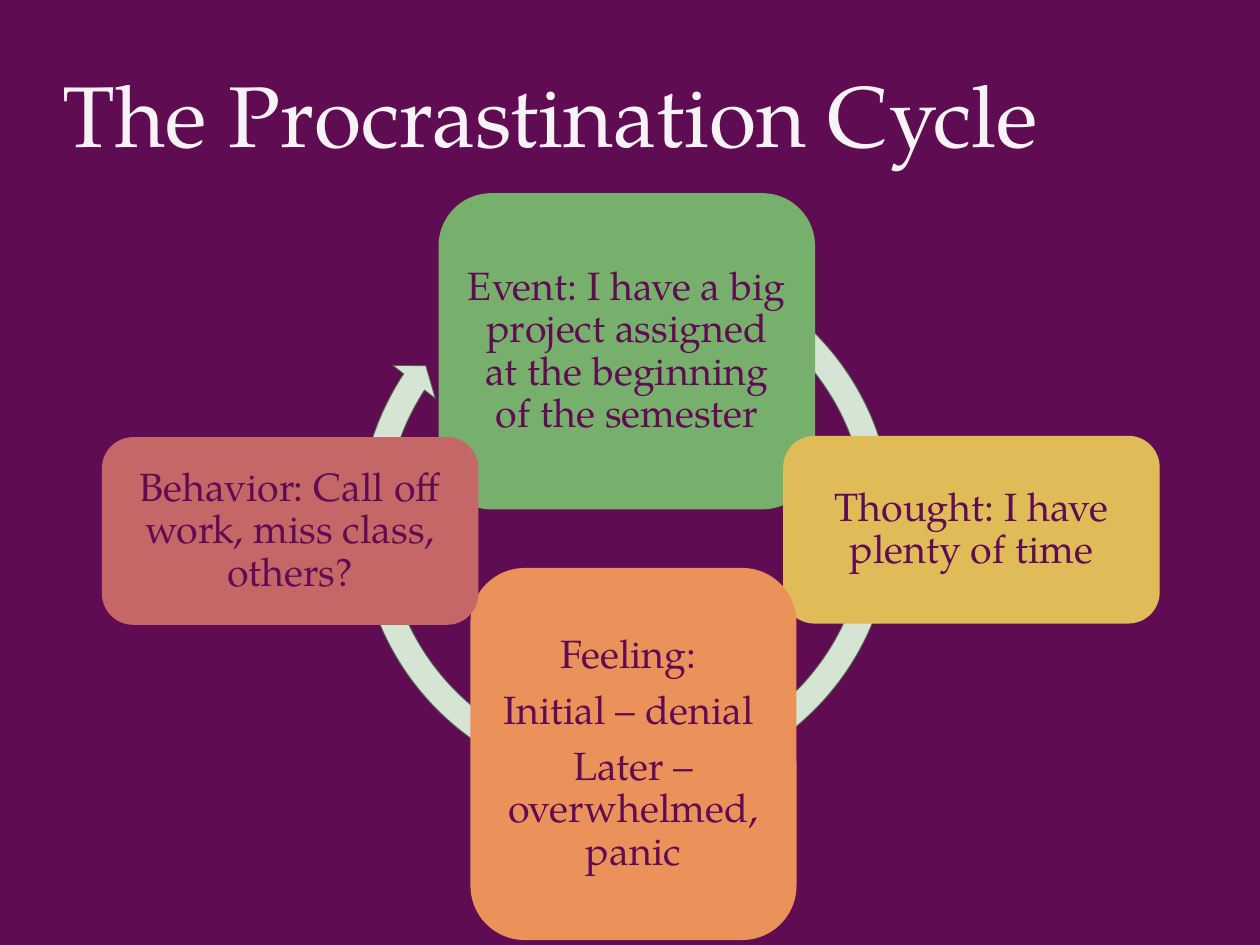
from dataclasses import dataclass

from lxml.etree import SubElement
from pptx import Presentation
from pptx.dml.color import RGBColor as RGB
from pptx.enum.shapes import MSO_SHAPE as SHAPE
from pptx.enum.text import MSO_ANCHOR as ANCHOR, MSO_AUTO_SIZE as AUTO, PP_ALIGN as ALIGN
from pptx.oxml.ns import qn
from pptx.util import Pt


@dataclass(frozen=True)
class Theme:
    """Colours, font and type sizes of the slide."""
    font: str = "TeX Gyre Pagella"
    title_size: int = 70
    body_size: int = 32
    plum: str = "600C52"
    white: str = "FFFFFF"
    ring: str = "D6E4D4"
    ring_edge: str = "546056"
    event: str = "77B06D"
    thought: str = "E0BC59"
    feeling: str = "EB925B"
    behavior: str = "C56667"


THEME = Theme()

STEPS = [
    (356.4, 157, 306, 257, THEME.event,
     ["Event: I have a big project assigned at the beginning of the semester"]),
    (636.5, 354.2, 306, 152.6, THEME.thought, ["Thought: I have plenty of time"]),
    (382.3, 461.6, 265, 302.4, THEME.feeling,
     ["Feeling: ", "Initial – denial ", "Later – overwhelmed, panic"]),
    (82.8, 355.2, 306, 152.6, THEME.behavior,
     ["Behavior: Call off work, miss class, others?"]),
]


def set_font(p, size, color):
    """Give a paragraph its typeface, size and colour."""
    p.font.name = THEME.font
    p.font.size = Pt(size)
    p.font.color.rgb = RGB.from_string(color)


def set_frame(tf, inset):
    """Wrap and centre text vertically with equal insets."""
    tf.auto_size = AUTO.NONE
    tf.word_wrap = True
    tf.vertical_anchor = ANCHOR.MIDDLE
    tf.margin_left = tf.margin_top = tf.margin_right = tf.margin_bottom = Pt(inset)


def add_title(s, text):
    """Place the slide title, slightly transparent."""
    sp = s.shapes.title
    sp.left, sp.top, sp.width, sp.height = Pt(51), Pt(12.2), Pt(922), Pt(160)
    tf = sp.text_frame
    tf.text = text
    set_frame(tf, 0)
    p = tf.paragraphs[0]
    p.alignment = ALIGN.LEFT
    set_font(p, THEME.title_size, THEME.white)
    for clr in p.font.fill._xPr.iter(qn("a:srgbClr")):
        SubElement(clr, qn("a:alpha"), val="95000")


def add_filled(s, kind, left, top, width, height, color):
    """Add a flat preset shape without an outline."""
    sp = s.shapes.add_shape(kind, Pt(left), Pt(top), Pt(width), Pt(height))
    sp.shadow.inherit = False
    sp.fill.solid()
    sp.fill.fore_color.rgb = RGB.from_string(color)
    sp.line.fill.background()
    return sp


def add_ring(s):
    """Draw the circular arrow behind the steps."""
    sp = add_filled(s, SHAPE.CIRCULAR_ARROW, 280.8, 195.8, 455.8, 455.8, THEME.ring)
    sp.line.color.rgb = RGB.from_string(THEME.ring_edge)
    sp.line.width = Pt(0.75)
    for i, value in enumerate((0.047, 2.729, 128.004, 180.52, 0.048)):
        sp.adjustments[i] = value


def add_step(s, left, top, width, height, color, lines):
    """Add one rounded step of the cycle with its text."""
    sp = add_filled(s, SHAPE.ROUNDED_RECTANGLE, left, top, width, height, color)
    tf = sp.text_frame
    tf.text = "\n".join(lines)
    set_frame(tf, 9.6)
    for p in tf.paragraphs:
        p.alignment = ALIGN.CENTER
        p.line_spacing = 0.9
        p.space_after = Pt(11)
        set_font(p, THEME.body_size, THEME.plum)


def main():
    """Build the slide and save it."""
    prs = Presentation()
    prs.slide_width, prs.slide_height = Pt(1024), Pt(768)
    s = prs.slides.add_slide(prs.slide_layouts[5])
    s.background.fill.solid()
    s.background.fill.fore_color.rgb = RGB.from_string(THEME.plum)
    add_title(s, "The Procrastination Cycle")
    add_ring(s)
    for step in STEPS:
        add_step(s, *step)
    prs.save("out.pptx")


if __name__ == "__main__":
    main()
